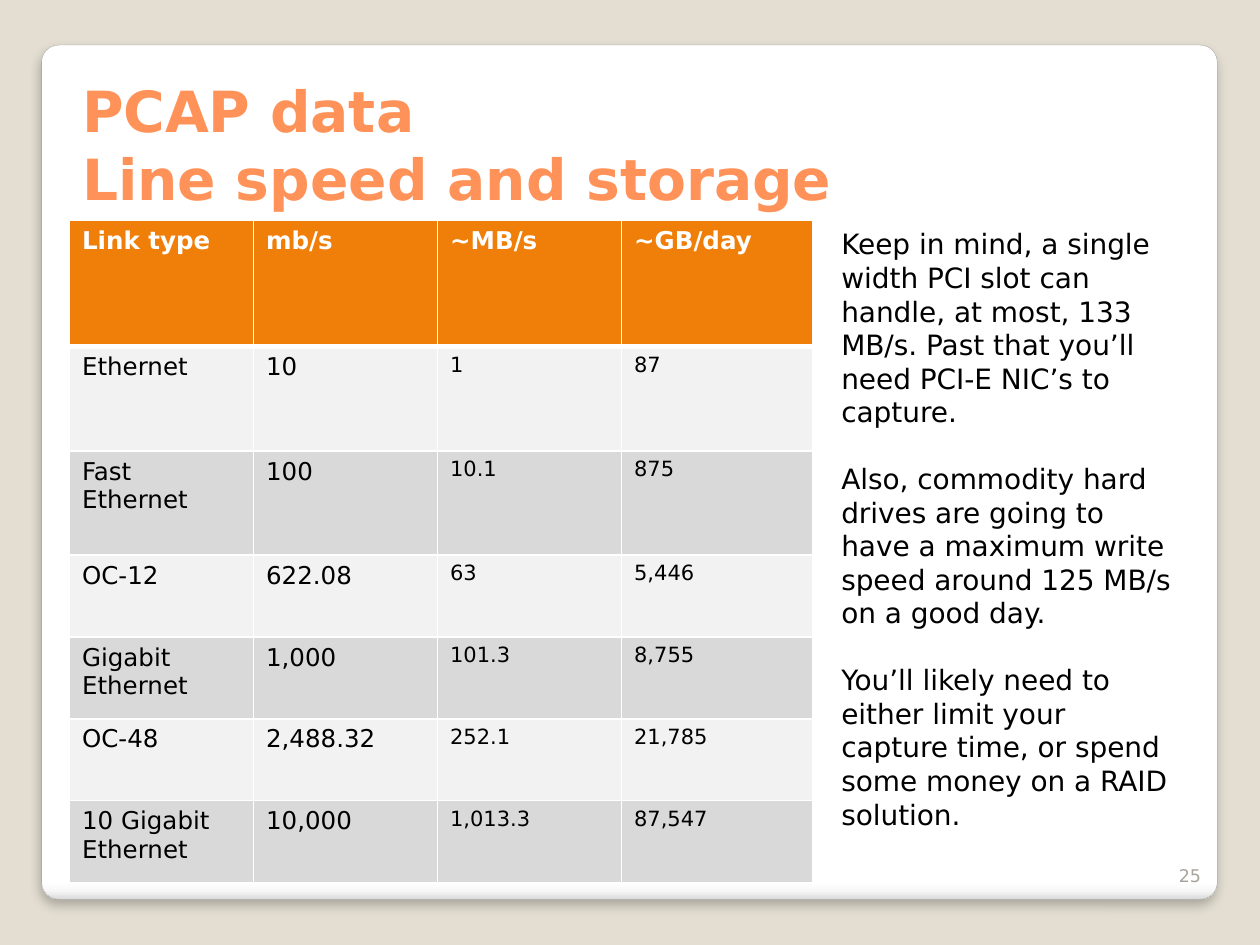
import pptx
import pptx.dml.color
import pptx.enum.shapes
import pptx.enum.text
import pptx.oxml
import pptx.oxml.ns
import pptx.util
from pptx.util import Cm

FONT = "DejaVu Sans"
COLORS = {
    "background": "E3DED1",
    "card line": "A4A4A4",
    "title": "FF9258",
    "header": "F07F09",
    "light row": "F2F2F2",
    "dark row": "D9D9D9",
    "white": "FFFFFF",
    "text": "000000",
    "number": "A8A49B",
}
CARD_STOPS = [(0, "FFFFFF"), (98, "FFFFFF"), (99, "F7F7F7"), (100, "DADADA")]
NAMESPACE = pptx.oxml.ns.nsdecls("a")


def color(name):
    return pptx.dml.color.RGBColor.from_string(COLORS[name])


def style(paragraph, size, color_name, bold=False):
    paragraph.font.name = FONT
    paragraph.font.size = pptx.util.Pt(size)
    paragraph.font.bold = bold
    paragraph.font.color.rgb = color(color_name)


presentation = pptx.Presentation()
presentation.slide_width = Cm(25.4)
presentation.slide_height = Cm(19.05)
slide = presentation.slides.add_slide(presentation.slide_layouts[5])
slide.background.fill.solid()
slide.background.fill.fore_color.rgb = color("background")

# Card with gradient and soft shadow, behind the title
card = slide.shapes.add_shape(
    pptx.enum.shapes.MSO_SHAPE.ROUNDED_RECTANGLE, Cm(0.84), Cm(0.91), Cm(23.7), Cm(17.22))
card.adjustments[0] = 0.02
card.line.color.rgb = color("card line")
card.line.width = pptx.util.Pt(0.16)
stops = "".join(
    f'<a:gs pos="{position * 1000}"><a:srgbClr val="{value}"/></a:gs>'
    for position, value in CARD_STOPS)
properties = card._element.spPr
properties.insert(2, pptx.oxml.parse_xml(
    f'<a:gradFill {NAMESPACE} rotWithShape="1"><a:gsLst>{stops}</a:gsLst>'
    '<a:lin ang="5400000" scaled="0"/></a:gradFill>'))
properties.append(pptx.oxml.parse_xml(
    f'<a:effectLst {NAMESPACE}><a:outerShdw blurRad="76200" dist="50800" dir="5400000" '
    'algn="t" rotWithShape="0"><a:srgbClr val="000000"><a:alpha val="25000"/></a:srgbClr>'
    '</a:outerShdw></a:effectLst>'))
slide.shapes._spTree.insert(2, card._element)

# Title
title = slide.shapes.title
title.left, title.top, title.width, title.height = Cm(1.4), Cm(1.47), Cm(22.73), Cm(2.92)
title.text_frame.text = "PCAP data\vLine speed and storage"
title.text_frame.auto_size = pptx.enum.text.MSO_AUTO_SIZE.NONE
title.text_frame.vertical_anchor = pptx.enum.text.MSO_ANCHOR.BOTTOM
title.text_frame.paragraphs[0].alignment = pptx.enum.text.PP_ALIGN.LEFT
style(title.text_frame.paragraphs[0], 32.4, "title", True)

# Table of link speeds
rows = [
    ("Link type", "mb/s", "~MB/s", "~GB/day"),
    ("Ethernet", "10", "1", "87"),
    ("Fast Ethernet", "100", "10.1", "875"),
    ("OC-12", "622.08", "63", "5,446"),
    ("Gigabit Ethernet", "1,000", "101.3", "8,755"),
    ("OC-48", "2,488.32", "252.1", "21,785"),
    ("10 Gigabit Ethernet", "10,000", "1,013.3", "87,547"),
]
column_widths = [3.71, 3.71, 3.71, 3.86]
row_heights = [2.54, 2.1, 2.1, 1.65, 1.65, 1.65, 1.65]
table = slide.shapes.add_table(
    len(rows), len(column_widths), Cm(1.4), Cm(4.45),
    Cm(sum(column_widths)), Cm(sum(row_heights))).table
for column, width in zip(table.columns, column_widths):
    column.width = Cm(width)
for row, height in zip(table.rows, row_heights):
    row.height = Cm(height)

for row_index, row in enumerate(rows):
    is_header = row_index == 0
    fill_name = "header" if is_header else ("light row" if row_index % 2 else "dark row")
    for column_index, value in enumerate(row):
        cell = table.cell(row_index, column_index)
        cell.text = value
        size = 14 if is_header or column_index < 2 else 12
        style(cell.text_frame.paragraphs[0], size, "white" if is_header else "text", is_header)
        cell.fill.solid()
        cell.fill.fore_color.rgb = color(fill_name)
        # Borders precede the fill in the cell properties
        for position, side in enumerate(("lnL", "lnR", "lnT", "lnB")):
            thick = (side == "lnB" and is_header) or (side == "lnT" and row_index == 1)
            cell._tc.tcPr.insert(position, pptx.oxml.parse_xml(
                f'<a:{side} {NAMESPACE} w="{38100 if thick else 12700}"><a:solidFill>'
                f'<a:srgbClr val="{COLORS["white"]}"/></a:solidFill></a:{side}>'))

# Side remarks
remarks = [
    "Keep in mind, a single width PCI slot can handle, at most, 133 MB/s. "
    "Past that you’ll need PCI-E NIC’s to capture.",
    "Also, commodity hard drives are going to have a maximum write speed "
    "around 125 MB/s on a good day.",
    "You’ll likely need to either limit your capture time, or spend some money "
    "on a RAID solution.",
]
remarks_frame = slide.shapes.add_textbox(Cm(16.71), Cm(4.45), Cm(7.19), Cm(12.57)).text_frame
remarks_frame.word_wrap = True
remarks_frame.text = "\n".join(remarks)
for paragraph in remarks_frame.paragraphs:
    style(paragraph, 16, "text")
    paragraph.space_after = pptx.util.Pt(19)

# Slide number
number_frame = slide.shapes.add_textbox(Cm(23.19), Cm(16.97), Cm(1.27), Cm(1.02)).text_frame
number_frame.word_wrap = True
number_frame.text = "25"
number_frame.vertical_anchor = pptx.enum.text.MSO_ANCHOR.BOTTOM
number_frame.paragraphs[0].alignment = pptx.enum.text.PP_ALIGN.RIGHT
style(number_frame.paragraphs[0], 10, "number")

presentation.save("out.pptx")
